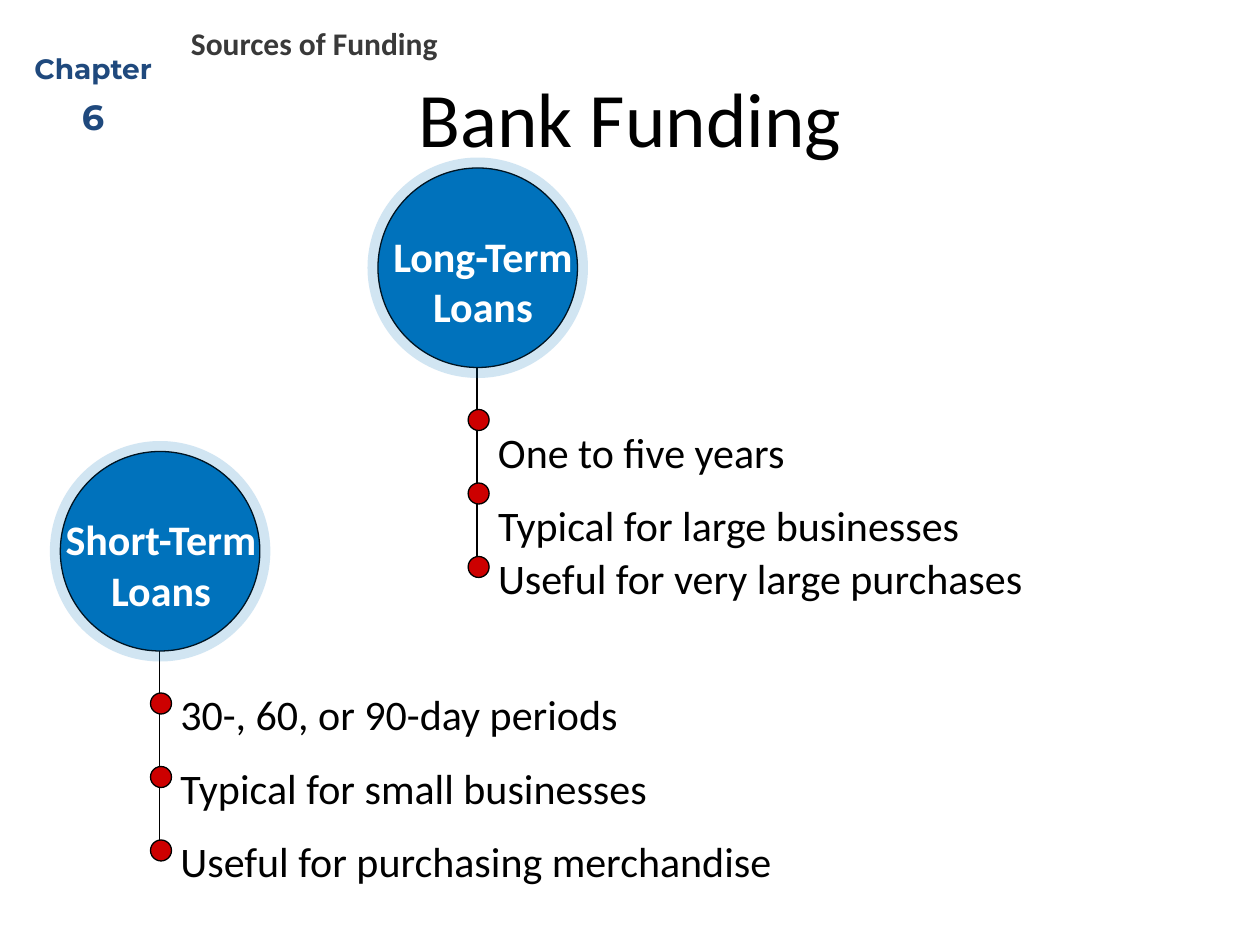
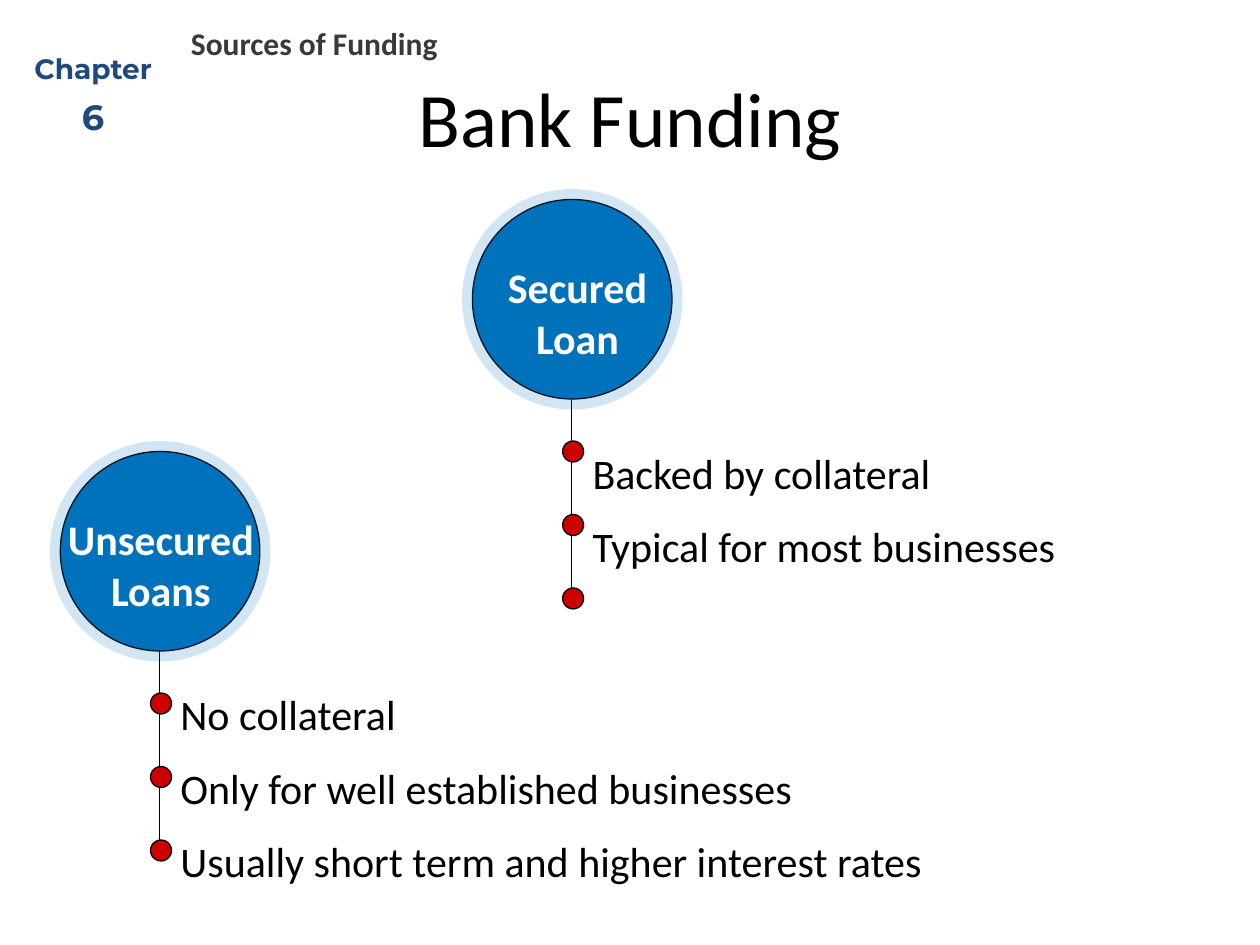
from dataclasses import dataclass

import pptx
import pptx.dml.color
import pptx.enum.shapes
import pptx.enum.text
import pptx.oxml
import pptx.oxml.ns
import pptx.util
from lxml import etree

Pt = pptx.util.Pt
ALIGN = pptx.enum.text.PP_ALIGN


@dataclass(frozen=True)
class Theme:
    body_font: str = "Calibri"
    chapter_font: str = "Montserrat"
    black: str = "000000"
    white: str = "FFFFFF"
    navy: str = "1F497D"
    gray: str = "393939"
    blue: str = "0072BC"
    red: str = "CD0000"
    title_size: float = 44
    loan_size: float = 24
    topic_size: float = 18
    chapter_size: float = 16
    number_size: float = 20
    outline: float = 0.75
    halo_opacity: int = 18


THEME = Theme()


@dataclass(frozen=True)
class Fact:
    text: str
    width: float
    drop: float  # distance below the top of the halo


@dataclass(frozen=True)
class Loan:
    """A loan type: haloed disc, stem with three dots, and facts."""
    name: str
    left: float
    top: float
    name_width: float
    facts: tuple[Fact, ...]
    name_shift: float = 0


# Geometry of a loan, measured from the top left of its halo
HALO = 126
DISC = 114
DISC_INSET = (HALO - DISC) / 2
NAME_DROP, NAME_HEIGHT = 38, 65.5
STEM_X, STEM_TOP, STEM_BOTTOM = 62.5, 102, 234
DOT, DOT_X, DOT_DROP, DOT_PITCH, DOT_COUNT = 12, 57.5, 144, 42, 3
FACT_X, FACT_HEIGHT = 67.5, 36

SLIDES = (
    (
        Loan("Long-Term\vLoans", 210, 90, 120, (
            Fact("One to five years", 180, 150),
            Fact("Typical for large businesses", 281, 192),
            Fact("Useful for very large purchases", 317.5, 222),
        ), name_shift=3),
        Loan("Short-Term\vLoans", 28.5, 252, 126.5, (
            Fact("30-, 60, or 90-day periods", 266.5, 138),
            Fact("Typical for small businesses", 283.5, 180),
            Fact("Useful for purchasing merchandise", 355.5, 222),
        ), name_shift=0.5),
    ),
    (
        Loan("Unsecured\nLoans", 28.5, 252, 121.5, (
            Fact("No collateral", 139, 138),
            Fact("Only for well established businesses", 367, 180),
            Fact("Usually short term and higher interest rates", 442, 222),
        ), name_shift=0.5),
        Loan("Secured\nLoan", 264, 108, 95, (
            Fact("Backed by collateral", 209.5, 144),
            Fact("Typical for most businesses", 281.5, 186),
        ), name_shift=3),
    ),
)


def rgb(color: str) -> pptx.dml.color.RGBColor:
    return pptx.dml.color.RGBColor.from_string(color)


def format_paragraph(paragraph, size: float, color: str, bold: bool = False,
                     align=ALIGN.LEFT, font: str = THEME.body_font) -> None:
    paragraph.alignment = align
    for run in paragraph.runs:
        run.font.name = font
        run.font.size = Pt(size)
        run.font.bold = bold
        run.font.color.rgb = rgb(color)


def add_label(slide, text: str, left: float, top: float, width: float,
              height: float, wrap: bool = False):
    label = slide.shapes.add_textbox(Pt(left), Pt(top), Pt(width), Pt(height))
    label.text_frame.text = text
    label.text_frame.word_wrap = wrap
    label.text_frame.auto_size = pptx.enum.text.MSO_AUTO_SIZE.SHAPE_TO_FIT_TEXT
    return label.text_frame


def add_circle(slide, left: float, top: float, size: float, color: str):
    circle = slide.shapes.add_shape(pptx.enum.shapes.MSO_SHAPE.OVAL,
                                    Pt(left), Pt(top), Pt(size), Pt(size))
    circle.shadow.inherit = False
    circle.fill.solid()
    circle.fill.fore_color.rgb = rgb(color)
    circle.line.color.rgb = rgb(THEME.black)
    circle.line.width = Pt(THEME.outline)
    return circle


def add_halo(slide, left: float, top: float) -> None:
    halo = add_circle(slide, left, top, HALO, THEME.blue)
    halo.line.fill.background()
    color = halo._element.spPr.find(
        pptx.oxml.ns.qn("a:solidFill")).find(pptx.oxml.ns.qn("a:srgbClr"))
    alpha = etree.SubElement(color, pptx.oxml.ns.qn("a:alpha"))
    alpha.set("val", str(THEME.halo_opacity * 1000))


def add_stem(slide, loan: Loan) -> None:
    x = Pt(loan.left + STEM_X)
    stem = slide.shapes.add_connector(
        pptx.enum.shapes.MSO_CONNECTOR.STRAIGHT,
        x, Pt(loan.top + STEM_TOP), x, Pt(loan.top + STEM_BOTTOM))
    stem.line.color.rgb = rgb(THEME.black)
    stem.line.width = Pt(THEME.outline)
    etree.SubElement(stem._element.spPr, pptx.oxml.ns.qn("a:effectLst"))


def add_loan(slide, loan: Loan) -> None:
    # Stem behind the disc and its halo
    add_stem(slide, loan)
    add_circle(slide, loan.left + DISC_INSET, loan.top + DISC_INSET,
               DISC, THEME.blue)
    add_halo(slide, loan.left, loan.top)

    # Name centred over the disc
    name_left = loan.left + (HALO - loan.name_width) / 2 + loan.name_shift
    name = add_label(slide, loan.name, name_left, loan.top + NAME_DROP,
                     loan.name_width, NAME_HEIGHT)
    for paragraph in name.paragraphs:
        format_paragraph(paragraph, THEME.loan_size, THEME.white, True,
                         ALIGN.CENTER)

    # Dots at an equal pitch, with the facts beside them
    for index in range(DOT_COUNT):
        add_circle(slide, loan.left + DOT_X,
                   loan.top + DOT_DROP + index * DOT_PITCH, DOT, THEME.red)
    for fact in loan.facts:
        label = add_label(slide, fact.text, loan.left + FACT_X,
                          loan.top + fact.drop, fact.width, FACT_HEIGHT)
        format_paragraph(label.paragraphs[0], THEME.loan_size, THEME.black)


def add_heading(slide) -> None:
    # Slide title
    title = slide.shapes.title
    title.left, title.top = Pt(36), Pt(21.6)
    title.width, title.height = Pt(648), Pt(90)
    title.text_frame.text = "Bank Funding"
    title.text_frame.vertical_anchor = pptx.enum.text.MSO_ANCHOR.MIDDLE
    format_paragraph(title.text_frame.paragraphs[0], THEME.title_size,
                     THEME.black, align=ALIGN.CENTER)

    # Chapter mark
    chapter = add_label(slide, "Chapter\n6", 2, 26, 102.5, 57.5, wrap=True)
    sizes = (THEME.chapter_size, THEME.number_size)
    for paragraph, size in zip(chapter.paragraphs, sizes):
        format_paragraph(paragraph, size, THEME.navy, True, ALIGN.CENTER,
                         THEME.chapter_font)
    chapter.paragraphs[1].space_before = Pt(6)

    # Chapter topic
    topic = add_label(slide, "Sources of Funding", 102, 10, 600, 29, wrap=True)
    format_paragraph(topic.paragraphs[0], THEME.topic_size, THEME.gray, True)


def main() -> None:
    deck = pptx.Presentation()
    deck.slide_width, deck.slide_height = Pt(720), Pt(540)
    title_only = deck.slide_layouts[5]
    for loans in SLIDES:
        slide = deck.slides.add_slide(title_only)
        add_heading(slide)
        for loan in loans:
            add_loan(slide, loan)
    deck.save("out.pptx")


if __name__ == "__main__":
    main()
